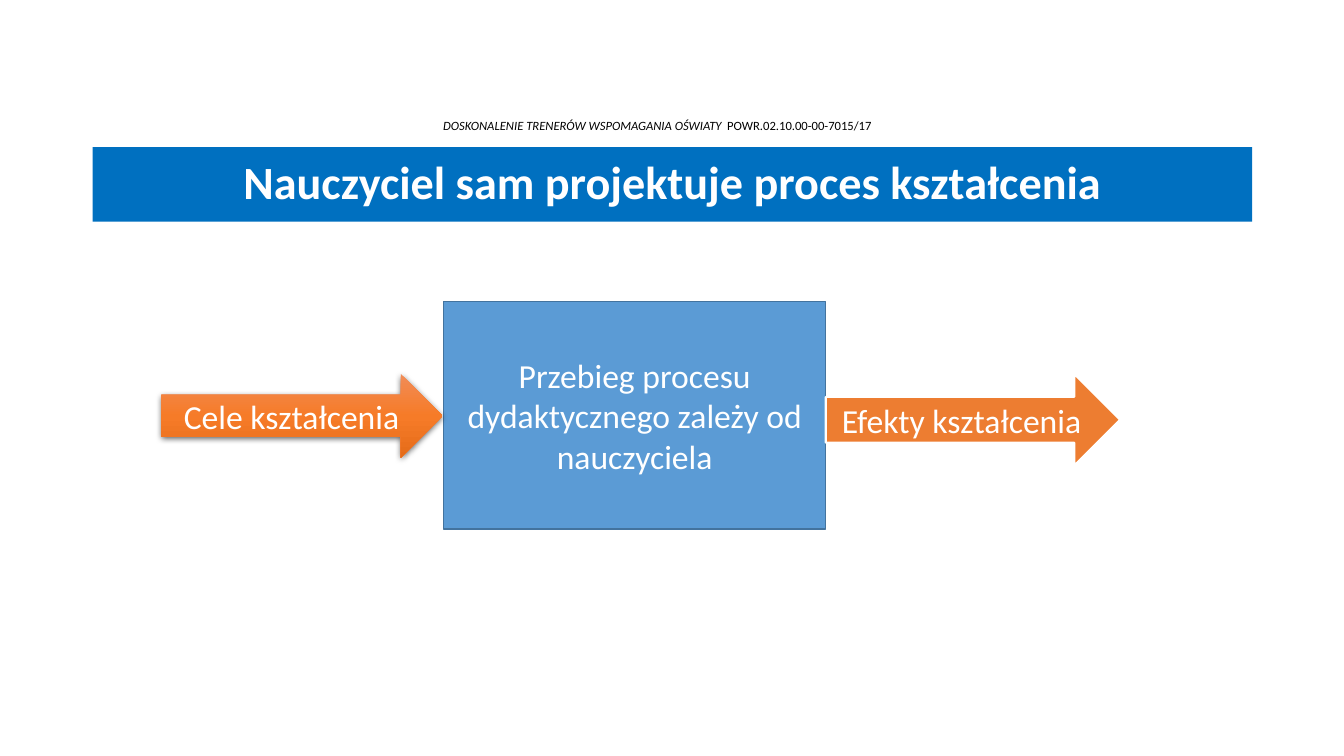
from copy import deepcopy

from lxml import etree
from pptx import Presentation
from pptx.dml.color import RGBColor
from pptx.enum import shapes, text
from pptx.oxml import ns
from pptx.util import Inches, Pt

BLACK = RGBColor(0x00, 0x00, 0x00)
WHITE = RGBColor(0xFF, 0xFF, 0xFF)
NAVY = RGBColor(0x00, 0x70, 0xC0)
BLUE = RGBColor(0x5B, 0x9B, 0xD5)
EDGE = RGBColor(0x43, 0x73, 0x9E)
ORANGE = RGBColor(0xED, 0x7D, 0x31)
SHADES = (
    RGBColor(0xF1, 0x8C, 0x57),
    RGBColor(0xF6, 0x7B, 0x28),
    RGBColor(0xE5, 0x6C, 0x19),
)
RECT = shapes.MSO_SHAPE.RECTANGLE
ARROW = shapes.MSO_SHAPE.RIGHT_ARROW


def add_run(para, words, size, color, bold=False, italic=False):
    """Add one formatted run to a paragraph."""
    run = para.add_run()
    run.text = words
    font = run.font
    font.name = "Calibri"
    font.size = Pt(size)
    font.bold = bold
    font.italic = italic
    font.color.rgb = color


def set_frame(frame):
    """Wrap and centre a text frame and return its first paragraph."""
    frame.word_wrap = True
    frame.vertical_anchor = text.MSO_ANCHOR.MIDDLE
    para = frame.paragraphs[0]
    para.alignment = text.PP_ALIGN.CENTER
    return para


def add_block(slide, kind, box, fill, words, size=24, bold=False, line=None):
    """Add a filled shape with centred white text."""
    shape = slide.shapes.add_shape(kind, *map(Inches, box))
    shape.shadow.inherit = False
    shape.fill.solid()
    shape.fill.fore_color.rgb = fill
    if line:
        shape.line.color.rgb, shape.line.width = line
    else:
        shape.line.fill.background()
    add_run(set_frame(shape.text_frame), words, size, WHITE, bold)
    return shape


def add_glow(shape):
    """Give a shape a vertical three-stop gradient and a soft shadow."""
    fill = shape.fill
    fill.gradient()
    fill.gradient_angle = 270
    props = shape._element.spPr
    stops = props.find(".//" + ns.qn("a:gsLst"))
    stops.append(deepcopy(stops[-1]))
    for step, (stop, shade) in enumerate(zip(fill.gradient_stops, SHADES)):
        stop.position = step / 2
        stop.color.rgb = shade
    effects = props.find(ns.qn("a:effectLst"))
    outer = etree.SubElement(
        effects, ns.qn("a:outerShdw"), blurRad=str(Pt(4.5)),
        dist=str(Pt(1.5)), dir="5400000", algn="ctr", rotWithShape="0")
    tone = etree.SubElement(outer, ns.qn("a:srgbClr"), val=str(BLACK))
    etree.SubElement(tone, ns.qn("a:alpha"), val="63000")


def add_header(slide):
    """Add the project name and number above the title."""
    box = slide.shapes.add_textbox(*map(Inches, (0.79, 1.09, 11.46, 0.3)))
    para = set_frame(box.text_frame)
    name = "DOSKONALENIE TRENERÓW WSPOMAGANIA OŚWIATY "
    add_run(para, name, 9, BLACK, italic=True)
    add_run(para, " POWR.02.10.00-00-7015/17", 9, BLACK)


def main():
    """Build the slide and save it."""
    deck = Presentation()
    deck.slide_width = Inches(13.33)
    deck.slide_height = Inches(7.5)
    slide = deck.slides.add_slide(deck.slide_layouts[6])
    add_header(slide)
    title = add_block(slide, RECT, (0.92, 1.46, 11.5, 0.74), NAVY,
                      "Nauczyciel sam projektuje proces kształcenia", 33, True)
    title.text_frame.paragraphs[0].line_spacing = 0.9
    add_block(slide, RECT, (4.4, 2.99, 3.79, 2.26), BLUE,
              "Przebieg procesu dydaktycznego zależy od nauczyciela",
              line=(EDGE, Pt(1)))
    goals = add_block(slide, ARROW, (1.6, 3.71, 2.79, 0.83), ORANGE,
                      "Cele kształcenia")
    add_glow(goals)
    add_block(slide, ARROW, (8.19, 3.71, 2.92, 0.91), ORANGE,
              "Efekty kształcenia", line=(WHITE, Pt(1.5)))
    deck.save("out.pptx")


if __name__ == "__main__":
    main()
